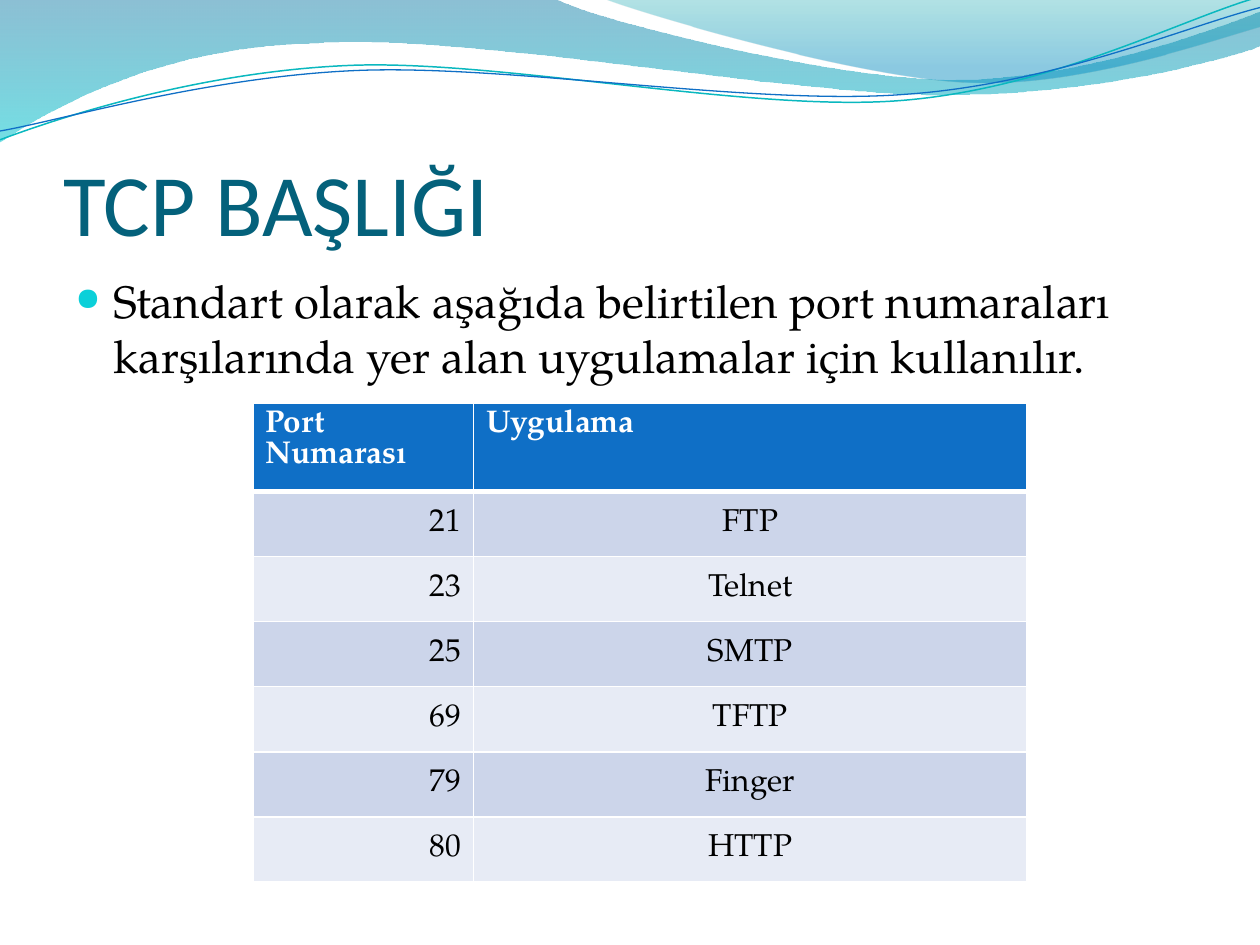
from lxml.etree import SubElement
from pptx import Presentation
from pptx.dml.color import RGBColor
from pptx.enum.text import MSO_ANCHOR, PP_ALIGN
from pptx.oxml.ns import qn
from pptx.util import Inches, Pt

COLORS = {
    "title": "04617B", "text": "000000", "white": "FFFFFF", "bullet": "0BD0D9",
    "header": "0F6FC6", "odd": "CCD5EA", "even": "E7EBF5",
    "teal line": "0AB8BF", "blue line": "0F6FC6",
}
HEADING_FONT, BODY_FONT = "Calibri", "TeX Gyre Pagella"

TITLE = "TCP BAŞLIĞI"
STATEMENT = ("Standart olarak aşağıda belirtilen port numaraları "
             "karşılarında yer alan uygulamalar için kullanılır.")
HEADERS = ("Port Numarası", "Uygulama")
PORTS = [("21", "FTP"), ("23", "Telnet"), ("25", "SMTP"),
         ("69", "TFTP"), ("79", "Finger"), ("80", "HTTP")]
COLUMN_WIDTHS = (1.75, 4.39)
HEADER_HEIGHT, BODY_HEIGHT = 0.68, 3.1

# Each wave is a list of steps: two numbers are a straight line, six a Bezier curve.
# Gradient stops are position, colour and opacity in percent.
FILLED_WAVES = [
    ([(0, 0), (4.4, -0.01), (4.76, 0.17, 6.64, 0.63, 7.58, 0.63),
      (8.53, 0.63, 9.58, 0.26, 10, 0.09), (10.01, 0.36),
      (9.83, 0.44, 8.7, 0.76, 7.46, 0.75), (6.22, 0.75, 3.82, 0.28, 2.57, 0.34),
      (1.29, 0.36, 0.46, 0.83, -0.01, 1.13)],
     [(0, "0074A1", 45), (1, "00C6CF", 55)]),
    ([(4.79, -0.01), (5.09, 0.11, 6.82, 0.62, 7.69, 0.65),
      (8.56, 0.69, 9.61, 0.32, 10, 0.21), (10, 0)],
     [(0, "00A1A9", 30), (0.8, "008BBF", 45)]),
]
LINE_WAVES = [
    ([(0, 1.11), (0.48, 0.93, 1.58, 0.57, 2.77, 0.52),
      (3.95, 0.47, 5.93, 0.89, 7.13, 0.8), (8.33, 0.71, 9.38, 0.15, 9.98, -0.02)],
     "teal line", 0.85),
    ([(0, 1.04), (0.47, 0.96, 1.64, 0.61, 2.83, 0.56),
      (4.03, 0.51, 5.97, 0.84, 7.17, 0.75), (8.36, 0.67, 9.41, 0.21, 10, 0.06)],
     "blue line", 0.75),
]


def color(name):
    return RGBColor.from_string(COLORS[name])


def add_wave(page, steps, close):
    """Draw straight segments between the step ends, then bend those that are curves."""
    start, *ends = [(Inches(step[-2]), Inches(step[-1])) for step in steps]
    builder = page.shapes.build_freeform(*start)
    builder.add_line_segments(ends, close=close)
    wave = builder.convert_to_shape()
    wave.shadow.inherit = False
    segments = list(wave.element.iter(qn("a:lnTo")))
    for segment, step in zip(segments, steps[1:]):
        if len(step) == 2:
            continue
        segment.tag = qn("a:cubicBezTo")
        controls = [(step[0], step[1]), (step[2], step[3])]
        for index, (x, y) in enumerate(controls):
            point = SubElement(segment, qn("a:pt"), x=str(Inches(x) - wave.left),
                               y=str(Inches(y) - wave.top))
            segment.insert(index, point)
    return wave


def add_filled_wave(page, steps, stops):
    wave = add_wave(page, steps, True)
    wave.line.fill.background()
    wave.fill.gradient()
    wave.fill.gradient_angle = 270
    for stop, (position, shade, _) in zip(wave.fill.gradient_stops, stops):
        stop.position = position
        stop.color.rgb = RGBColor.from_string(shade)
    shades = wave.element.spPr.iter(qn("a:srgbClr"))
    for shade, (_, _, opacity) in zip(shades, stops):
        SubElement(shade, qn("a:alpha"), val=str(opacity * 1000))


def add_line_wave(page, steps, name, width):
    wave = add_wave(page, steps, False)
    wave.fill.background()
    wave.line.color.rgb = color(name)
    wave.line.width = Pt(width)


def write(para, text, size, font, name, bold=False):
    span = para.add_run()
    span.text = text
    span.font.size, span.font.name, span.font.bold = Pt(size), font, bold
    span.font.color.rgb = color(name)


def add_title(page):
    title = page.shapes.title
    title.left, title.top = Inches(0.5), Inches(0.77)
    title.width, title.height = Inches(9), Inches(1.25)
    frame = title.text_frame
    frame.vertical_anchor = MSO_ANCHOR.BOTTOM
    frame.margin_left = frame.margin_right = frame.margin_bottom = 0
    frame.margin_top = Inches(0.05)
    para = frame.paragraphs[0]
    para.alignment = PP_ALIGN.LEFT
    write(para, TITLE, 50, HEADING_FONT, "title")


def add_statement(page):
    box = page.shapes.add_textbox(Inches(0.5), Inches(2.12), Inches(9), Inches(4.8))
    box.text_frame.word_wrap = True
    para = box.text_frame.paragraphs[0]
    para.space_before = Pt(5)
    write(para, STATEMENT, 26, BODY_FONT, "text")
    properties = para._p.get_or_add_pPr()
    properties.set("marL", str(Inches(0.3)))
    properties.set("indent", str(-Inches(0.3)))
    shade = SubElement(properties, qn("a:buClr"))
    SubElement(shade, qn("a:srgbClr"), val=COLORS["bullet"])
    SubElement(properties, qn("a:buSzPct"), val="70000")
    SubElement(properties, qn("a:buChar"), char="●")


def add_borders(cell, top, bottom):
    properties = cell._tc.get_or_add_tcPr()
    for side, width in (("L", 1), ("R", 1), ("T", top), ("B", bottom)):
        line = SubElement(properties, qn(f"a:ln{side}"), w=str(Pt(width)))
        fill = SubElement(line, qn("a:solidFill"))
        SubElement(fill, qn("a:srgbClr"), val=COLORS["white"])


def add_port_table(page):
    rows = [HEADERS, *PORTS]
    table = page.shapes.add_table(len(rows), len(HEADERS), Inches(2.01), Inches(3.2),
                                  Inches(sum(COLUMN_WIDTHS)),
                                  Inches(HEADER_HEIGHT + BODY_HEIGHT)).table
    for column, width in zip(table.columns, COLUMN_WIDTHS):
        column.width = Inches(width)
    for index, texts in enumerate(rows):
        is_header = index == 0
        table.rows[index].height = Inches(HEADER_HEIGHT if is_header
                                          else BODY_HEIGHT / len(PORTS))
        band = "header" if is_header else "odd" if index % 2 else "even"
        for number, text in enumerate(texts):
            cell = table.cell(index, number)
            add_borders(cell, 3 if index == 1 else 1, 3 if is_header else 1)
            cell.fill.solid()
            cell.fill.fore_color.rgb = color(band)
            para = cell.text_frame.paragraphs[0]
            if not is_header:
                cell.vertical_anchor = MSO_ANCHOR.MIDDLE
                para.alignment = (PP_ALIGN.RIGHT, PP_ALIGN.CENTER)[number]
            write(para, text, 18, BODY_FONT, "white" if is_header else "text", is_header)


def main():
    deck = Presentation()
    deck.slide_width, deck.slide_height = Inches(10), Inches(7.5)
    page = deck.slides.add_slide(deck.slide_layouts[5])
    for steps, stops in FILLED_WAVES:
        add_filled_wave(page, steps, stops)
    for steps, name, width in LINE_WAVES:
        add_line_wave(page, steps, name, width)
    add_title(page)
    add_statement(page)
    add_port_table(page)
    deck.save("out.pptx")


if __name__ == "__main__":
    main()
